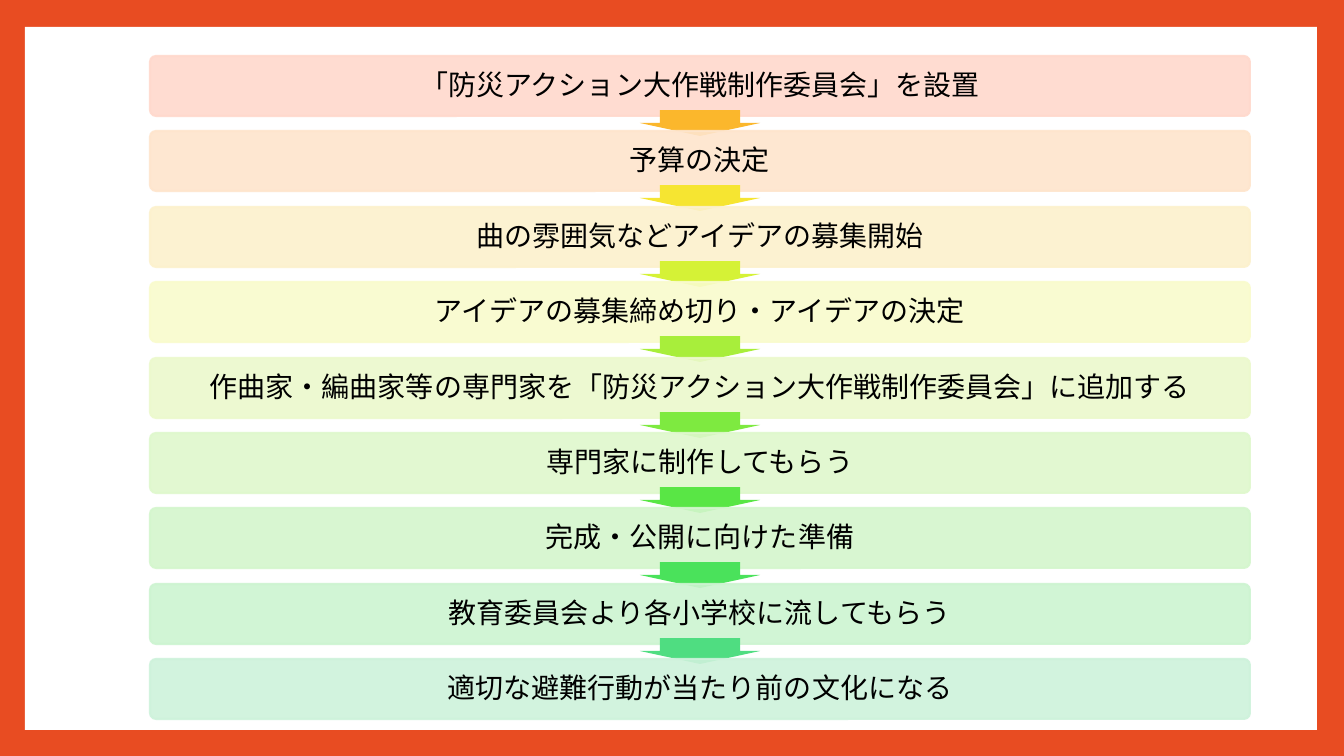
import pptx
import pptx.util
import pptx.dml.color
import pptx.enum.shapes
import pptx.enum.text
import pptx.oxml

PX = 914400 / 100.8
COLORS = {"frame": "E84C22", "panel": "FFFFFF", "text": "000000"}
STEPS = [
    ("「防災アクション大作戦制作委員会」を設置", "FFD9CD", "FBB72C"),
    ("予算の決定", "FEE5CD", "F6E531"),
    ("曲の雰囲気などアイデアの募集開始", "FCF1CD", "D5F236"),
    ("アイデアの募集締め切り・アイデアの決定", "F9FBCD", "A8EE3B"),
    ("作曲家・編曲家等の専門家を「防災アクション大作戦制作委員会」に追加する", "ECF9CD", "7EEA40"),
    ("専門家に制作してもらう", "DFF8CD", "59E645"),
    ("完成・公開に向けた準備", "D4F6CD", "4AE25B"),
    ("教育委員会より各小学校に流してもらう", "CDF4D1", "4FDD81"),
    ("適切な避難行動が当たり前の文化になる", "CEF2DB", None),
]
FIRST_TOP, LAST_TOP = 56, 659
SHAPES = pptx.enum.shapes.MSO_SHAPE


def rgb(color):
    return pptx.dml.color.RGBColor.from_string(color)


def add_block(kind, left, top, width, height, color):
    block = slide.shapes.add_shape(kind, *(round(n * PX) for n in (left, top, width, height)))
    block.shadow.inherit = False
    block.fill.solid()
    block.fill.fore_color.rgb = rgb(color)
    block.line.fill.background()
    return block


deck = pptx.Presentation()
deck.slide_width = round(1344 * PX)
deck.slide_height = round(756 * PX)
slide = deck.slides.add_slide(deck.slide_layouts[6])
slide.background.fill.solid()
slide.background.fill.fore_color.rgb = rgb(COLORS["frame"])
add_block(SHAPES.RECTANGLE, 25, 27, 1292, 703, COLORS["panel"])

for index, (wording, tint, arrow_color) in enumerate(STEPS):
    top = round(FIRST_TOP + index * (LAST_TOP - FIRST_TOP) / (len(STEPS) - 1))
    step = add_block(SHAPES.ROUNDED_RECTANGLE, 150, top, 1100, 60, tint)
    step.adjustments[0] = 0.1
    step.line.color.rgb = rgb(tint)
    step.line.width = pptx.util.Pt(1.5)
    for tint_color in step._element.spPr.xpath(".//a:srgbClr"):
        alpha = pptx.oxml.parse_xml(
            '<a:alpha xmlns:a="http://schemas.openxmlformats.org/drawingml/2006/main" val="90000"/>'
        )
        tint_color.append(alpha)

    frame = step.text_frame
    frame.word_wrap = True
    frame.vertical_anchor = pptx.enum.text.MSO_ANCHOR.MIDDLE
    frame.margin_left = frame.margin_right = round(2 * PX)
    frame.margin_top = frame.margin_bottom = round(2 * PX)
    line = frame.paragraphs[0]
    line.alignment = pptx.enum.text.PP_ALIGN.CENTER
    line.line_spacing = 0.9
    run = line.add_run()
    run.text = wording
    run.font.name = "Arial"
    run.font.size = pptx.util.Pt(20)
    run.font.color.rgb = rgb(COLORS["text"])

    if arrow_color:
        arrow = add_block(SHAPES.RIGHT_ARROW, 687, top + 7, 26, 120, arrow_color)
        arrow.rotation = 90
        arrow.adjustments[0] = 0.67
        arrow.adjustments[1] = 0.5

deck.save("out.pptx")
